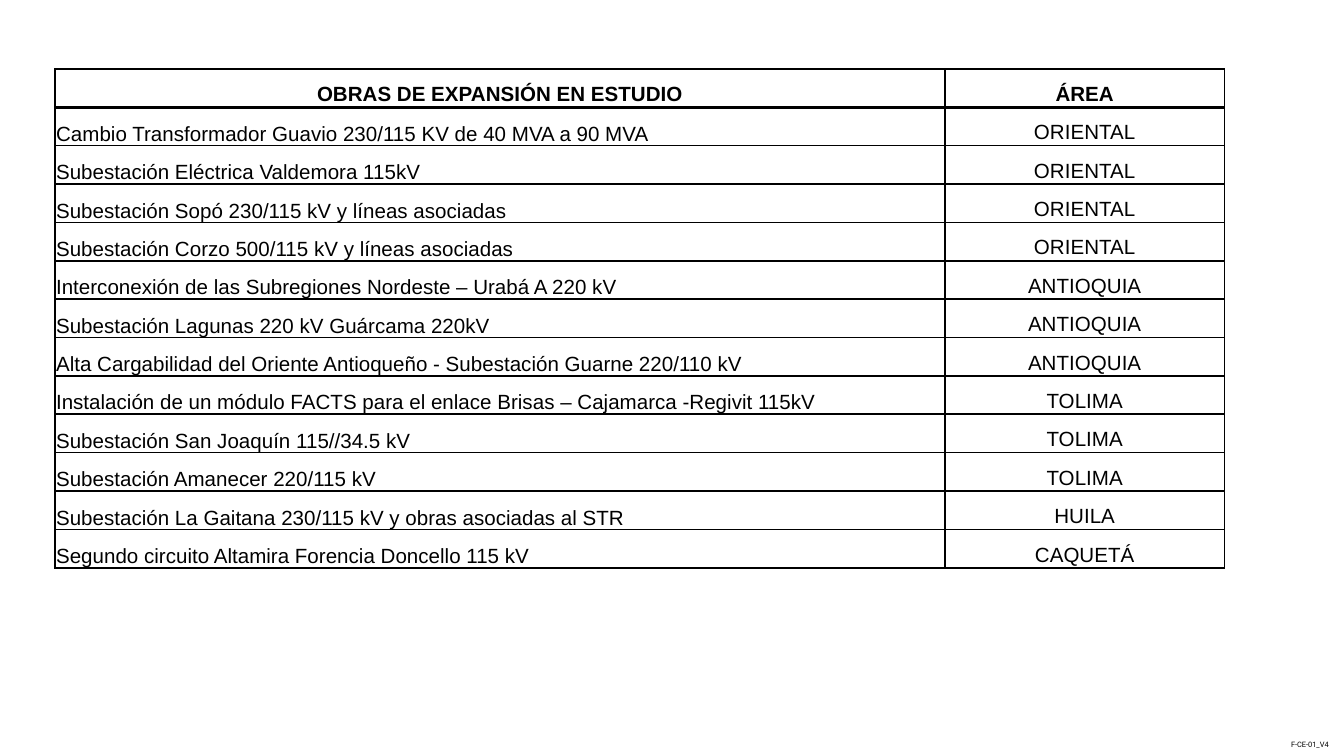
import dataclasses

import lxml.etree
import pptx
import pptx.dml.color
import pptx.enum.text
import pptx.oxml.ns
import pptx.util

Cm = pptx.util.Cm
Pt = pptx.util.Pt
Align = pptx.enum.text.PP_ALIGN
Anchor = pptx.enum.text.MSO_ANCHOR
qn = pptx.oxml.ns.qn


@dataclasses.dataclass(frozen=True)
class Theme:
    ink: str = "000000"
    table_font: str = "Arial"
    code_font: str = "Roboto"
    table_size: float = 11
    code_size: float = 4
    thin: float = 1
    thick: float = 2


HEADINGS = ("OBRAS DE EXPANSIÓN EN ESTUDIO", "ÁREA")
WORKS_BY_AREA = (
    ("ORIENTAL", (
        "Cambio Transformador Guavio 230/115 KV de 40 MVA a 90 MVA",
        "Subestación Eléctrica Valdemora 115kV",
        "Subestación Sopó 230/115 kV y líneas asociadas",
        "Subestación Corzo 500/115 kV y líneas asociadas",
    )),
    ("ANTIOQUIA", (
        "Interconexión de las Subregiones Nordeste – Urabá A 220 kV",
        "Subestación Lagunas 220 kV Guárcama 220kV",
        "Alta Cargabilidad del Oriente Antioqueño - Subestación Guarne 220/110 kV",
    )),
    ("TOLIMA", (
        "Instalación de un módulo FACTS para el enlace Brisas – Cajamarca -Regivit 115kV",
        "Subestación San Joaquín 115//34.5 kV",
        "Subestación Amanecer 220/115 kV",
    )),
    ("HUILA", ("Subestación La Gaitana 230/115 kV y obras asociadas al STR",)),
    ("CAQUETÁ", ("Segundo circuito Altamira Forencia Doncello 115 kV",)),
)


class SlideBuilder:
    def __init__(self, slide, theme):
        self.slide = slide
        self.theme = theme

    def format_font(self, paragraph, family, size, bold=False):
        font = paragraph.font
        font.name = family
        font.size = Pt(size)
        font.bold = bold
        font.color.rgb = pptx.dml.color.RGBColor.from_string(self.theme.ink)

    def add_code(self, wording, left, top, width, height):
        code = self.slide.shapes.add_textbox(left, top, width, height)
        code.text_frame.word_wrap = False
        code.text_frame.auto_size = pptx.enum.text.MSO_AUTO_SIZE.SHAPE_TO_FIT_TEXT
        code.text_frame.text = wording
        self.format_font(code.text_frame.paragraphs[0], self.theme.code_font, self.theme.code_size)

    def add_borders(self, cell, top, bottom):
        thin = self.theme.thin
        properties = cell._tc.get_or_add_tcPr()
        for side, weight in (("L", thin), ("R", thin), ("T", top), ("B", bottom)):
            border = lxml.etree.SubElement(properties, qn(f"a:ln{side}"), w=str(Pt(weight)))
            fill = lxml.etree.SubElement(border, qn("a:solidFill"))
            lxml.etree.SubElement(fill, qn("a:srgbClr"), val=self.theme.ink)

    def fill_cell(self, cell, wording, row, column):
        theme = self.theme
        is_heading = row == 0
        is_work = not is_heading and column == 0
        cell.text = wording
        cell.margin_left = cell.margin_right = cell.margin_top = Cm(0.02)
        cell.margin_bottom = 0
        cell.vertical_anchor = Anchor.BOTTOM if is_work else Anchor.MIDDLE
        paragraph = cell.text_frame.paragraphs[0]
        paragraph.alignment = Align.LEFT if is_work else Align.CENTER
        paragraph.line_spacing = 1.5
        self.format_font(paragraph, theme.table_font, theme.table_size, is_heading)
        self.add_borders(
            cell,
            top=theme.thick if row == 1 else theme.thin,
            bottom=theme.thick if is_heading else theme.thin,
        )
        cell.fill.background()

    def add_table(self, rows, left, top, widths, height):
        frame = self.slide.shapes.add_table(len(rows), len(widths), left, top, sum(widths), height)
        table = frame.table
        table.first_row = table.horz_banding = False
        for column, width in zip(table.columns, widths):
            column.width = width
        for row, wordings in enumerate(rows):
            table.rows[row].height = height // len(rows)
            for column, wording in enumerate(wordings):
                self.fill_cell(table.cell(row, column), wording, row, column)


def main():
    deck = pptx.Presentation()
    deck.slide_width = Cm(25.4)
    deck.slide_height = Cm(14.28)
    builder = SlideBuilder(deck.slides.add_slide(deck.slide_layouts[6]), Theme())
    works = [(work, area) for area, names in WORKS_BY_AREA for work in names]
    builder.add_code("F-CE-01_V4", Cm(24.15), Cm(13.85), Cm(1.25), Cm(0.43))
    builder.add_table([HEADINGS, *works], Cm(1.04), Cm(1.3), (Cm(16.82), Cm(5.28)), Cm(9.43))
    deck.save("out.pptx")


if __name__ == "__main__":
    main()
